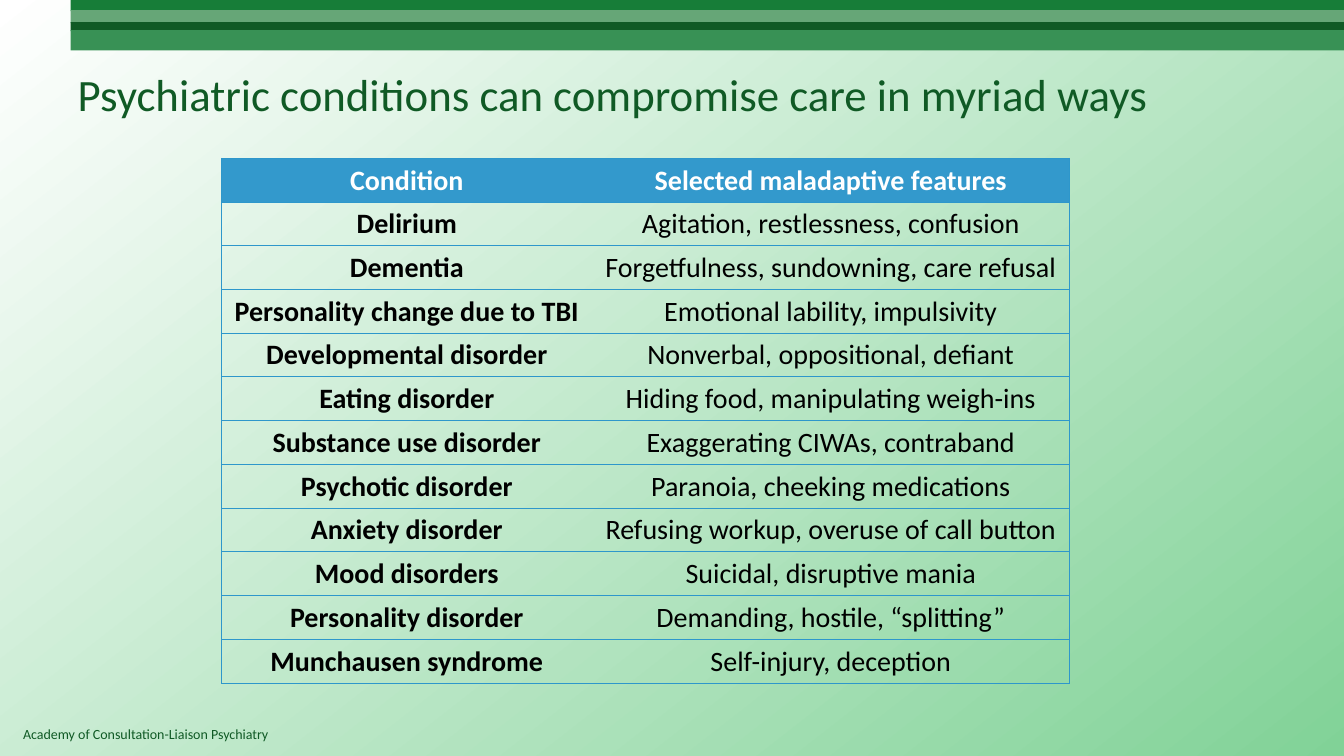
from lxml.etree import SubElement
from pptx import Presentation
from pptx.dml.color import RGBColor
from pptx.enum.shapes import MSO_SHAPE
from pptx.enum.text import MSO_ANCHOR, PP_ALIGN
from pptx.oxml.ns import qn
from pptx.util import Inches, Pt

COLORS = {
    "white": "FFFFFF", "black": "000000", "mint": "81D297",
    "green": "177D38", "sage": "66A677", "forest": "105A25", "leaf": "389155",
    "header": "3399CC", "border": "2E97CB",
}
BANDS = [  # top, height, color
    (0, 0.11, "green"),
    (0.1, 0.13, "sage"),
    (0.22, 0.09, "forest"),
    (0.3, 0.2, "leaf"),
]
CONDITIONS = [
    ("Condition", "Selected maladaptive features"),
    ("Delirium", "Agitation, restlessness, confusion"),
    ("Dementia", "Forgetfulness, sundowning, care refusal"),
    ("Personality change due to TBI", "Emotional lability, impulsivity"),
    ("Developmental disorder", "Nonverbal, oppositional, defiant"),
    ("Eating disorder", "Hiding food, manipulating weigh-ins"),
    ("Substance use disorder", "Exaggerating CIWAs, contraband"),
    ("Psychotic disorder", "Paranoia, cheeking medications"),
    ("Anxiety disorder", "Refusing workup, overuse of call button"),
    ("Mood disorders", "Suicidal, disruptive mania"),
    ("Personality disorder", "Demanding, hostile, “splitting”"),
    ("Munchausen syndrome", "Self-injury, deception"),
]


def rgb(name):
    return RGBColor.from_string(COLORS[name])


class SlideBuilder:
    font_name = "Calibri"

    def __init__(self, slide):
        self.slide = slide

    def set_text(self, frame, text, size, color, bold=False, align=PP_ALIGN.LEFT):
        frame.text = text
        paragraph = frame.paragraphs[0]
        paragraph.alignment = align
        font = paragraph.runs[0].font
        font.name, font.size, font.bold = self.font_name, Pt(size), bold
        font.color.rgb = rgb(color)

    def background(self, start, end, clockwise_angle):
        fill = self.slide.background.fill
        fill.gradient()
        fill.gradient_angle = 360 - clockwise_angle
        for stop, color in zip(fill.gradient_stops, (start, end)):
            stop.color.rgb = rgb(color)

    def band(self, top, height, color):
        bar = self.slide.shapes.add_shape(
            MSO_SHAPE.RECTANGLE, Inches(0.7), Inches(top), Inches(12.63), Inches(height))
        bar.shadow.inherit = False
        bar.fill.solid()
        bar.fill.fore_color.rgb = rgb(color)
        bar.line.fill.background()

    def title(self, text):
        heading = self.slide.shapes.title
        heading.left, heading.top = Inches(0.67), Inches(0.3)
        heading.width, heading.height = Inches(12), Inches(1.25)
        heading.text_frame.vertical_anchor = MSO_ANCHOR.MIDDLE
        self.set_text(heading.text_frame, text, 32, "forest")

    def footer(self, text):
        credit = self.slide.shapes.add_textbox(
            Inches(0.13), Inches(7.15), Inches(9.25), Inches(0.27))
        credit.text_frame.word_wrap = True
        self.set_text(credit.text_frame, text, 10, "forest")

    def borders(self, cell, visible):
        """Draw the sides named in visible and clear the others."""
        properties = cell._tc.get_or_add_tcPr()
        for side in "LRTB":
            line = SubElement(properties, qn(f"a:ln{side}"), w=str(Pt(0.75)))
            if side in visible:
                fill = SubElement(line, qn("a:solidFill"))
                SubElement(fill, qn("a:srgbClr"), val=COLORS["border"])
            else:
                SubElement(line, qn("a:noFill"))

    def table(self, rows, left, top, widths, height):
        table = self.slide.shapes.add_table(
            len(rows), len(widths), Inches(left), Inches(top),
            Inches(sum(widths)), Inches(height)).table
        table.horz_banding = False
        for column, width in zip(table.columns, widths):
            column.width = Inches(width)
        for r, row in enumerate(rows):
            for c, text in enumerate(row):
                cell = table.cell(r, c)
                is_header = r == 0
                self.borders(cell, "LTB" if c == 0 else "RTB")
                if is_header:
                    cell.fill.solid()
                    cell.fill.fore_color.rgb = rgb("header")
                else:
                    cell.fill.background()
                cell.vertical_anchor = MSO_ANCHOR.MIDDLE
                self.set_text(cell.text_frame, text, 20, "white" if is_header else "black",
                              bold=is_header or c == 0, align=PP_ALIGN.CENTER)


def main():
    deck = Presentation()
    deck.slide_width, deck.slide_height = Inches(13.33), Inches(7.5)
    builder = SlideBuilder(deck.slides.add_slide(deck.slide_layouts[5]))
    builder.background("white", "mint", 52)
    for band in BANDS:
        builder.band(*band)
    builder.footer("Academy of Consultation-Liaison Psychiatry")
    builder.table(CONDITIONS, 2.2, 1.57, (3.67, 4.74), 5.2)
    builder.title("Psychiatric conditions can compromise care in myriad ways")
    deck.save("out.pptx")


if __name__ == "__main__":
    main()
